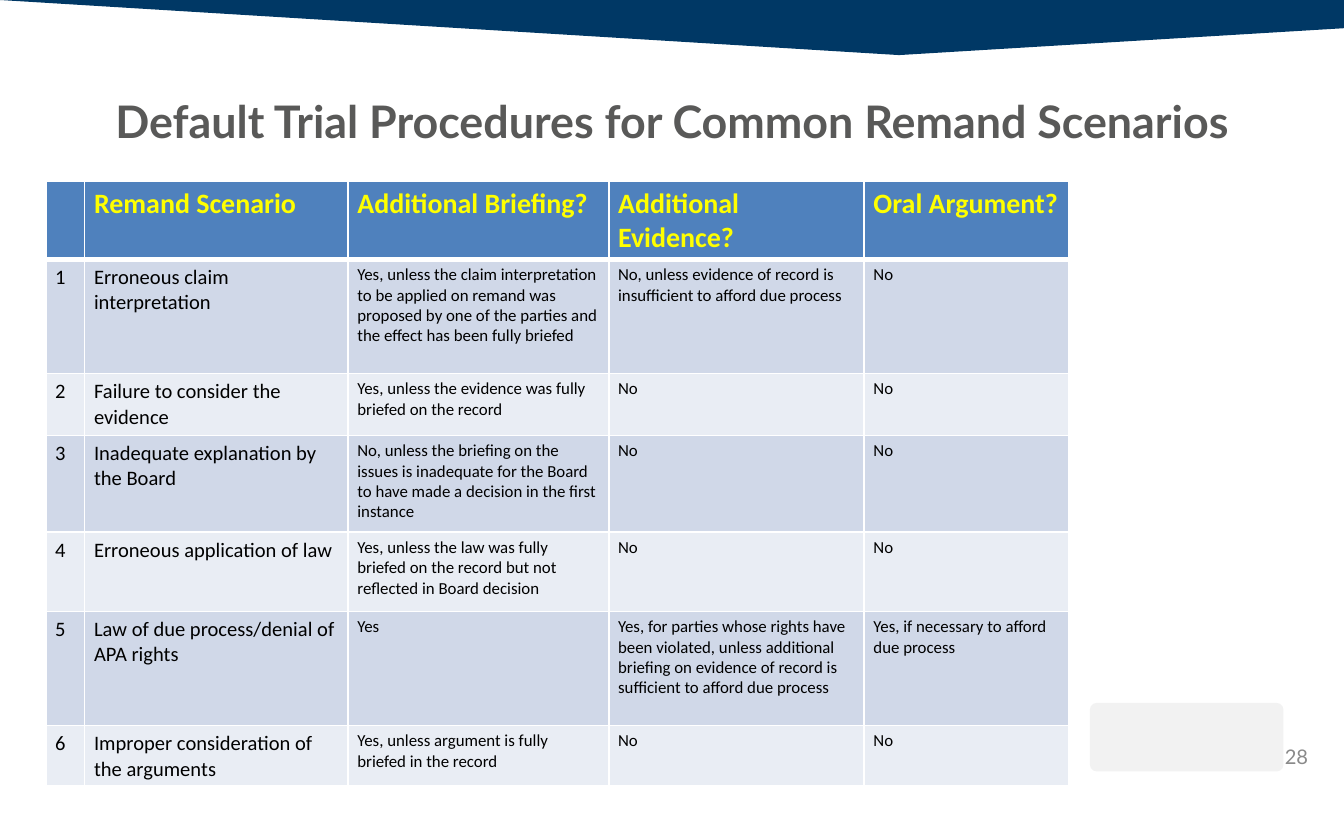
from dataclasses import dataclass

from lxml import etree
from pptx import Presentation
from pptx import util as u
from pptx.dml.color import RGBColor
from pptx.enum import shapes, text
from pptx.oxml import ns


@dataclass(frozen=True)
class Theme:
    navy: str = "003865"
    badge: str = "F2F2F2"
    title: str = "595958"
    page: str = "8A8A8A"
    header: str = "4F81BD"
    header_text: str = "FFFF00"
    bands: tuple = ("D0D8E8", "E9EDF4")
    ink: str = "000000"
    rule: str = "FFFFFF"
    heading_font: str = "Lato"
    table_font: str = "Calibri"
    title_size: float = 24
    page_size: float = 10.8
    header_size: float = 15
    scenario_size: float = 11
    answer_size: float = 9


THEME = Theme()
WIDTH, HEIGHT = u.Inches(10), u.Inches(6.25)
COLUMN_SHARES = (2.9, 19.6, 19.4, 19, 15.2)
ROW_SHARES = (9.12, 13.6, 7.36, 11.52, 9.44, 13.6, 6.72)
HEADINGS = ("", "Remand Scenario", "Additional Briefing?",
            "Additional Evidence?", "Oral Argument?")
SCENARIOS = (
    ("Erroneous claim interpretation",
     "Yes, unless the claim interpretation to be applied on remand was "
     "proposed by one of the parties and the effect has been fully briefed",
     "No, unless evidence of record is insufficient to afford due process",
     "No"),
    ("Failure to consider the evidence",
     "Yes, unless the evidence was fully briefed on the record", "No", "No"),
    ("Inadequate explanation by the Board",
     "No, unless the briefing on the issues is inadequate for the Board "
     "to have made a decision in the first instance", "No", "No"),
    ("Erroneous application of law",
     "Yes, unless the law was fully briefed on the record but not "
     "reflected in Board decision", "No", "No"),
    ("Law of due process/denial of APA rights", "Yes",
     "Yes, for parties whose rights have been violated, unless additional "
     "briefing on evidence of record is sufficient to afford due process",
     "Yes, if necessary to afford due process"),
    ("Improper consideration of the arguments",
     "Yes, unless argument is fully briefed in the record", "No", "No"),
)


def across(percent):
    return round(WIDTH * percent / 100)


def down(percent):
    return round(HEIGHT * percent / 100)


def area(left, top, width, height):
    return across(left), down(top), across(width), down(height)


def paint(figure, color):
    figure.shadow.inherit = False
    figure.fill.solid()
    figure.fill.fore_color.rgb = RGBColor.from_string(color)
    figure.line.fill.background()


def style_text(frame, font, size, color, bold=False):
    for paragraph in frame.paragraphs:
        paragraph.font.size = u.Pt(size)
        for run in paragraph.runs:
            run.font.name = font
            run.font.size = u.Pt(size)
            run.font.bold = bold
            run.font.color.rgb = RGBColor.from_string(color)


def add_banner(slide):
    corners = [(across(x), down(y)) for x, y in
               ((100, 0), (0, 0), (66.9, 6.56), (100, 3.36))]
    outline = slide.shapes.build_freeform(*corners[0])
    outline.add_line_segments(corners[1:], close=True)
    paint(outline.convert_to_shape(), THEME.navy)


def add_badge(slide):
    badge = slide.shapes.add_shape(
        shapes.MSO_SHAPE.ROUNDED_RECTANGLE, *area(81.1, 83.68, 14.4, 8.16))
    badge.adjustments[0] = 0.1
    paint(badge, THEME.badge)


def add_label(slide, wording, place, size, color, bold=False,
              align=text.PP_ALIGN.LEFT):
    frame = slide.shapes.add_textbox(*place).text_frame
    frame.word_wrap = True
    frame.margin_left = frame.margin_right = 0
    frame.margin_top = frame.margin_bottom = 0
    frame.text = wording
    frame.paragraphs[0].alignment = align
    style_text(frame, THEME.heading_font, size, color, bold)


def rule_cell(cell, bottom_width):
    properties = cell._tc.get_or_add_tcPr()
    for side, width in zip("LRTB", (1, 1, 1, bottom_width)):
        edge = etree.SubElement(properties, ns.qn(f"a:ln{side}"),
                                w=str(u.Pt(width)))
        fill = etree.SubElement(edge, ns.qn("a:solidFill"))
        etree.SubElement(fill, ns.qn("a:srgbClr"), val=THEME.rule)


def fill_cell(cell, wording, fill, size, color, bold=False, bottom_width=1):
    cell.margin_left = cell.margin_right = u.Inches(0.07)
    cell.margin_top = cell.margin_bottom = u.Inches(0.04)
    rule_cell(cell, bottom_width)
    cell.fill.solid()
    cell.fill.fore_color.rgb = RGBColor.from_string(fill)
    cell.text_frame.text = wording
    style_text(cell.text_frame, THEME.table_font, size, color, bold)


def add_procedures(slide):
    place = area(3.4, 21.6, sum(COLUMN_SHARES), sum(ROW_SHARES))
    procedures = slide.shapes.add_table(
        len(ROW_SHARES), len(COLUMN_SHARES), *place).table
    procedures.first_row = procedures.horz_banding = False
    for column, share in zip(procedures.columns, COLUMN_SHARES):
        column.width = across(share)
    for row, share in zip(procedures.rows, ROW_SHARES):
        row.height = down(share)
    for index, heading in enumerate(HEADINGS):
        fill_cell(procedures.cell(0, index), heading, THEME.header,
                  THEME.header_size, THEME.header_text, True, 3)
    for number, scenario in enumerate(SCENARIOS, 1):
        band = THEME.bands[(number - 1) % 2]
        for index, wording in enumerate((str(number), *scenario)):
            size = THEME.scenario_size if index < 2 else THEME.answer_size
            fill_cell(procedures.cell(number, index), wording, band,
                      size, THEME.ink)


def main():
    deck = Presentation()
    deck.slide_width, deck.slide_height = WIDTH, HEIGHT
    slide = deck.slides.add_slide(deck.slide_layouts[6])
    add_banner(slide)
    add_badge(slide)
    add_label(slide, "Default Trial Procedures for Common Remand Scenarios",
              area(0, 11.2, 100, 6.4), THEME.title_size, THEME.title,
              True, text.PP_ALIGN.CENTER)
    add_label(slide, "28", area(95.6, 88.64, 4.4, 2.88),
              THEME.page_size, THEME.page)
    add_procedures(slide)
    deck.save("out.pptx")


if __name__ == "__main__":
    main()
